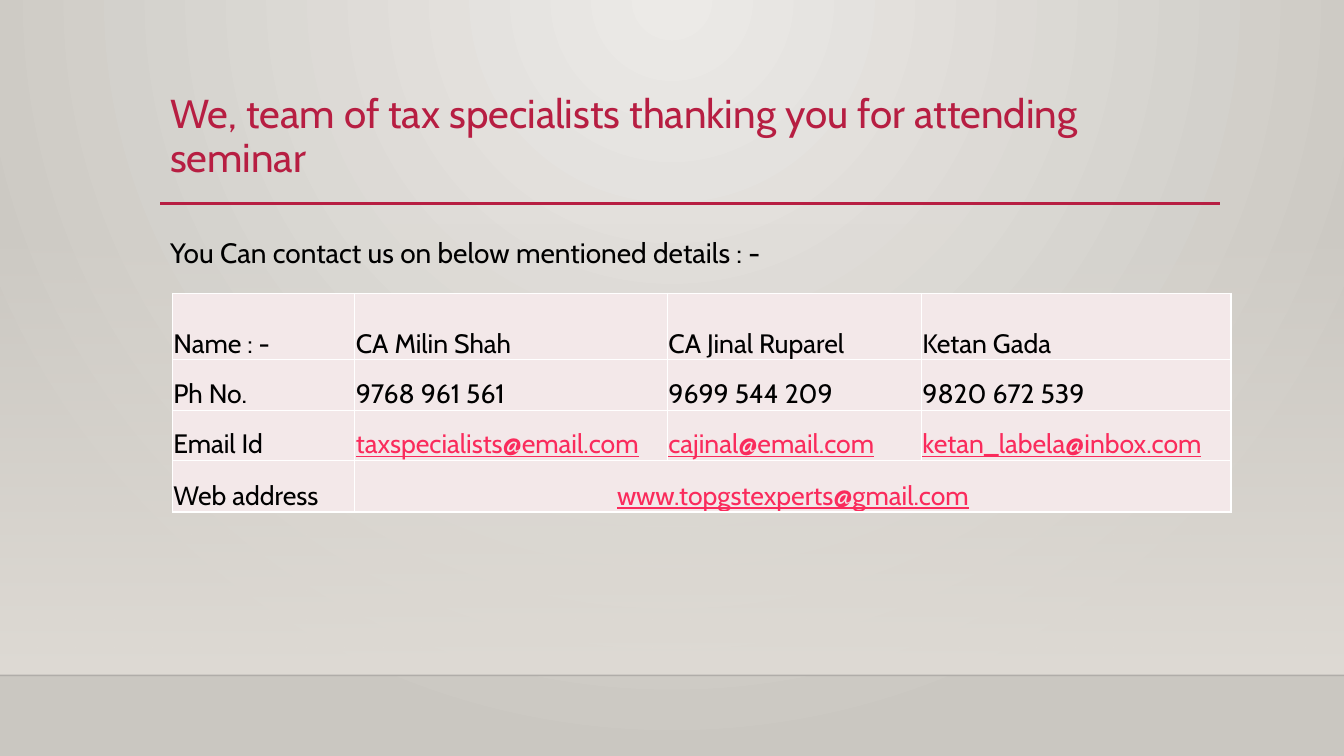
from lxml import etree
from pptx import Presentation
from pptx.dml.color import RGBColor
from pptx.enum import shapes, text
from pptx.oxml import parse_xml
from pptx.oxml.ns import qn
from pptx.util import Inches, Pt

FONT = "Cabin"
HUES = {"title": "B71E42", "text": "000000", "link": "FA2B5C", "cell": "F3E8E9",
        "edge": "FFFFFF", "floor": "000001", "light": "ECEAE7", "dark": "CAC7C1",
        "wall": "DFDBD5"}

TITLE = "We, team of tax specialists thanking you for attending seminar"
INTRO = "You Can contact us on below mentioned details : -"
ROWS = [
    ["Name : -", "CA Milin Shah", "CA Jinal Ruparel", "Ketan Gada"],
    ["Ph No.", "9768 961 561", "9699 544 209", "9820 672 539"],
    ["Email Id", "taxspecialists@email.com", "cajinal@email.com", "ketan_labela@inbox.com"],
    ["Web address", "www.topgstexperts@gmail.com"],
]
WIDTHS = [1.81, 3.1, 2.52, 3.07]
HEIGHTS = [0.66, 0.5, 0.5, 0.51]

NS = 'xmlns:a="http://schemas.openxmlformats.org/drawingml/2006/main"'


def color(name):
    return RGBColor.from_string(HUES[name])


def blend(stops, shade):
    """Gradient fill from (position, hue, opacity) stops and a shade element."""
    marks = "".join(
        f'<a:gs pos="{pos * 1000}"><a:srgbClr val="{HUES[hue]}">'
        f'<a:alpha val="{alpha * 1000}"/></a:srgbClr></a:gs>'
        for pos, hue, alpha in stops)
    return parse_xml(f'<a:gradFill {NS} rotWithShape="1"><a:gsLst>{marks}</a:gsLst>'
                     f'{shade}</a:gradFill>')


def swap_fill(fill, parent, new):
    """Put a custom gradient where the plain fill stands."""
    fill.solid()
    old = parent.find(qn("a:solidFill"))
    parent.replace(old, new)


def add_rule(slide, left, right, top, hue, width, alpha=100):
    rule = slide.shapes.add_connector(
        shapes.MSO_CONNECTOR.STRAIGHT, Inches(left), Inches(top), Inches(right), Inches(top))
    rule.line.color.rgb = color(hue)
    rule.line.width = Pt(width)
    props = rule._element.spPr
    if alpha < 100:
        tint = props.find(".//" + qn("a:srgbClr"))
        etree.SubElement(tint, qn("a:alpha")).set("val", str(alpha * 1000))
    etree.SubElement(props, qn("a:effectLst"))


def style(para, size, hue):
    para.font.name = FONT
    para.font.size = Pt(size)
    para.font.color.rgb = color(hue)


def add_text(slide, box, words, size, hue, gap):
    frame = slide.shapes.add_textbox(*map(Inches, box)).text_frame
    frame.word_wrap = True
    frame.vertical_anchor = text.MSO_ANCHOR.TOP
    para = frame.paragraphs[0]
    para.text = words
    para.line_spacing = gap
    style(para, size, hue)


def dress(cell):
    """Give a cell its edges, fill and insets."""
    props = cell._tc.get_or_add_tcPr()
    for side in ("lnL", "lnR", "lnT", "lnB"):
        props.append(parse_xml(
            f'<a:{side} {NS} w="12700"><a:solidFill><a:srgbClr val="{HUES["edge"]}"/>'
            f'</a:solidFill></a:{side}>'))
    cell.fill.solid()
    cell.fill.fore_color.rgb = color("cell")
    cell.margin_left = cell.margin_right = cell.margin_top = Inches(0.01)
    cell.margin_bottom = 0
    cell.vertical_anchor = text.MSO_ANCHOR.BOTTOM


def add_grid(slide):
    grid = slide.shapes.add_table(
        len(ROWS), len(WIDTHS), Inches(1.71), Inches(2.91),
        Inches(sum(WIDTHS)), Inches(sum(HEIGHTS))).table
    grid.first_row = grid.horz_banding = False
    for col, width in zip(grid.columns, WIDTHS):
        col.width = Inches(width)
    for row, height in zip(grid.rows, HEIGHTS):
        row.height = Inches(height)
    for cell in grid.iter_cells():
        dress(cell)
    last = len(ROWS) - 1
    grid.cell(last, 1).merge(grid.cell(last, len(WIDTHS) - 1))
    for r, row in enumerate(ROWS):
        for c, words in enumerate(row):
            para = grid.cell(r, c).text_frame.paragraphs[0]
            para.text = words
            link = "@" in words
            style(para, 19, "link" if link else "text")
            if link:
                para.font.underline = True
    grid.cell(last, 1).text_frame.paragraphs[0].alignment = text.PP_ALIGN.CENTER


def main():
    deck = Presentation()
    deck.slide_width, deck.slide_height = Inches(13.33), Inches(7.5)
    slide = deck.slides.add_slide(deck.slide_layouts[6])

    back = slide.background.fill
    back.solid()
    glow = blend([(0, "light", 100), (100, "dark", 100)],
                 '<a:path path="circle"><a:fillToRect l="43000" r="43000" b="100000"/></a:path>')
    swap_fill(back, slide._element.cSld.bg.bgPr, glow)

    wall = slide.shapes.add_shape(
        shapes.MSO_SHAPE.RECTANGLE, 0, Inches(2.21), deck.slide_width, Inches(4.49))
    wall.shadow.inherit = False
    wall.line.fill.background()
    fade = blend([(0, "wall", 0), (100, "wall", 100)], '<a:lin ang="5400000" scaled="0"/>')
    swap_fill(wall.fill, wall._element.spPr, fade)

    add_rule(slide, 0, 13.33, 6.7, "floor", 1, alpha=20)
    add_rule(slide, 1.59, 12.1, 2.02, "title", 2.5)
    add_text(slide, (1.59, 0.88, 10.5, 1.15), TITLE, 28.8, "title", 0.9)
    add_text(slide, (1.59, 2.22, 10.5, 3.77), INTRO, 20, "text", 1.2)
    add_grid(slide)
    deck.save("out.pptx")


if __name__ == "__main__":
    main()
